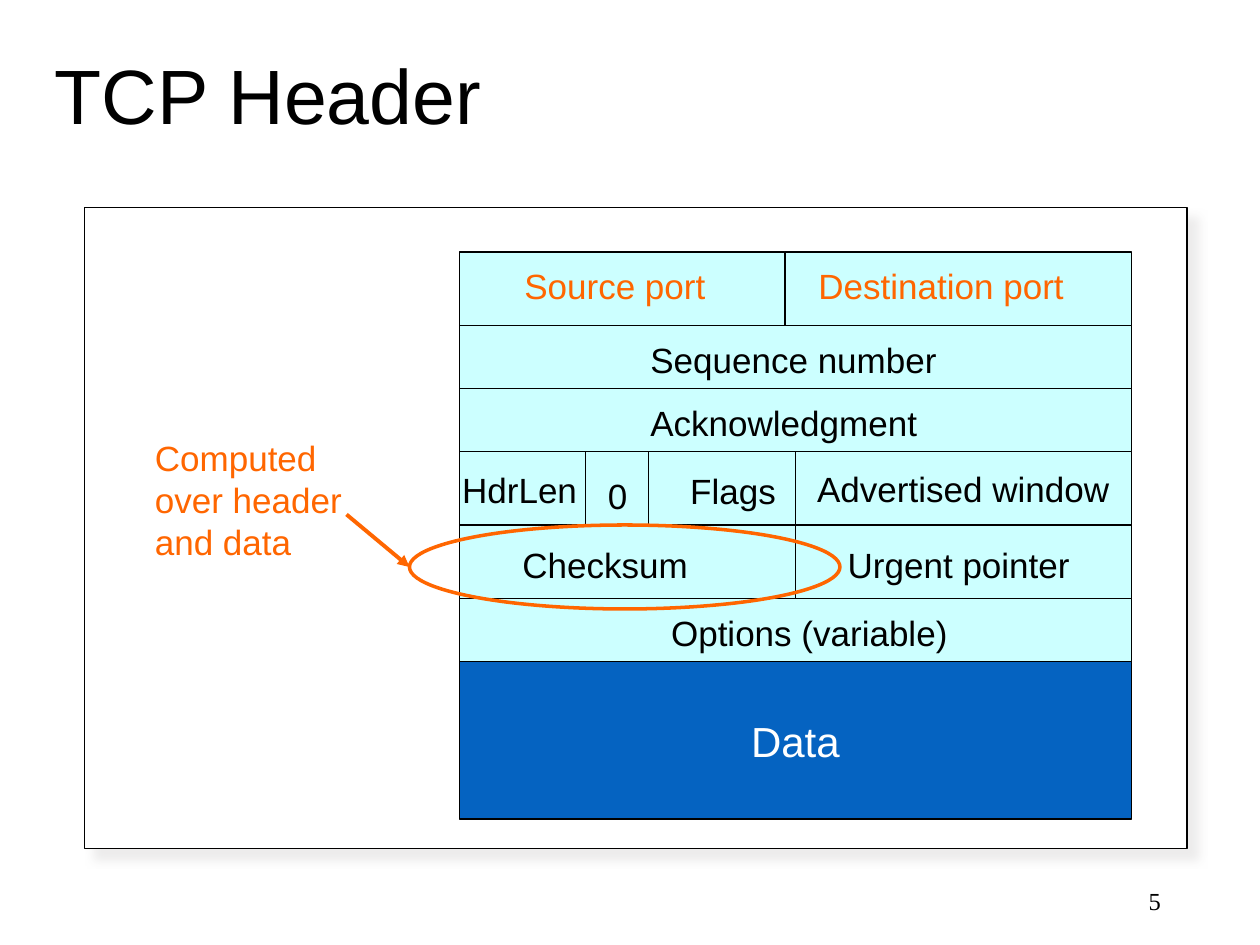
from typing import NamedTuple

from lxml import etree
from pptx import Presentation
from pptx.dml.color import RGBColor
from pptx.enum.shapes import MSO_CONNECTOR, MSO_SHAPE
from pptx.enum.text import MSO_ANCHOR, PP_ALIGN
from pptx.oxml import parse_xml
from pptx.oxml.ns import nsdecls, qn
from pptx.util import Pt

RECT, OVAL = MSO_SHAPE.RECTANGLE, MSO_SHAPE.OVAL
LINE = MSO_CONNECTOR.STRAIGHT
MIDDLE, TOP = MSO_ANCHOR.MIDDLE, MSO_ANCHOR.TOP
LEFT, CENTER, RIGHT = PP_ALIGN.LEFT, PP_ALIGN.CENTER, PP_ALIGN.RIGHT

BLACK = RGBColor(0x00, 0x00, 0x00)
WHITE = RGBColor(0xFF, 0xFF, 0xFF)
ORANGE = RGBColor(0xFF, 0x66, 0x00)
CYAN = RGBColor(0xCC, 0xFF, 0xFF)
BLUE = RGBColor(0x05, 0x63, 0xC1)

SHADOW = (
    f'<a:outerShdw {nsdecls("a")} blurRad="63500" dist="107950" dir="2700000" '
    'algn="tl" rotWithShape="0"><a:srgbClr val="E7E6E6">'
    '<a:alpha val="75000"/></a:srgbClr></a:outerShdw>'
)


class Box(NamedTuple):
    x: float
    y: float
    w: float
    h: float


class Row(NamedTuple):
    h: float
    split: float = 0
    fill: RGBColor = CYAN


class Label(NamedTuple):
    text: str
    x: float
    y: float
    w: float
    color: RGBColor = BLACK
    fill: RGBColor | None = CYAN


GRID = Box(262.5, 144, 384, 324)
ROWS = [
    Row(42, 186), Row(36), Row(36), Row(42, 192),
    Row(42, 192), Row(36), Row(90, fill=BLUE),
]
LABELS = [
    Label("Source port", 292.5, 147.6, 121, ORANGE),
    Label("Destination port", 460.6, 147.6, 158, ORANGE),
    Label("Sequence number", 364.5, 189.8, 182),
    Label("Acknowledgment", 364.5, 225.8, 171),
    Label("Advertised window", 459.8, 263.6, 184),
    Label("HdrLen", 257, 264, 84, fill=None),
    Label("Flags", 387.3, 264.8, 65),
    Label("0", 340.3, 267.6, 28),
    Label("Checksum", 291.4, 306.9, 113),
    Label("Urgent pointer", 477.3, 306.9, 148),
    Label("Options (variable)", 376.4, 345.8, 180),
]


def write(shape, text: str, size: float, color: RGBColor, align=LEFT,
          anchor=TOP, face: str = "Arial", wrap: bool = False) -> None:
    frame = shape.text_frame
    frame.text = text
    frame.word_wrap = wrap
    frame.vertical_anchor = anchor
    for para in frame.paragraphs:
        para.alignment = align
        para.font.size = Pt(size)
        para.font.name = face
        para.font.color.rgb = color


def draw(slide, kind, box: Box, fill: RGBColor | None,
         line: RGBColor = BLACK, width: float = 0.75):
    shape = slide.shapes.add_shape(kind, *map(Pt, box))
    shape.shadow.inherit = False
    if fill is None:
        shape.fill.background()
    else:
        shape.fill.solid()
        shape.fill.fore_color.rgb = fill
    shape.line.color.rgb = line
    shape.line.width = Pt(width)
    return shape


def link(slide, x1: float, y1: float, x2: float, y2: float,
         color: RGBColor = BLACK, width: float = 0.75, head: bool = False) -> None:
    line = slide.shapes.add_connector(LINE, Pt(x1), Pt(y1), Pt(x2), Pt(y2))
    line.line.color.rgb = color
    line.line.width = Pt(width)
    if head:
        etree.SubElement(line.line._get_or_add_ln(), qn("a:tailEnd"), type="triangle")
    etree.SubElement(line._element.spPr, qn("a:effectLst"))


def note(slide, box: Box, text: str, size: float, color: RGBColor, **style):
    shape = slide.shapes.add_textbox(*map(Pt, box))
    write(shape, text, size, color, **style)
    return shape


def grid(slide) -> None:
    y = GRID.y
    for row in ROWS:
        edges = [0, row.split, GRID.w] if row.split else [0, GRID.w]
        for a, b in zip(edges, edges[1:]):
            cell = draw(slide, RECT, Box(GRID.x + a, y, b - a, row.h), row.fill)
        y += row.h
    write(cell, "Data", 24, WHITE, CENTER, MIDDLE)


def label(slide, item: Label) -> None:
    shape = note(slide, Box(item.x, item.y, item.w, 31), item.text, 20, item.color)
    if item.fill is not None:
        shape.fill.solid()
        shape.fill.fore_color.rgb = item.fill


def main() -> None:
    deck = Presentation()
    deck.slide_width, deck.slide_height = Pt(720), Pt(540)
    slide = deck.slides.add_slide(deck.slide_layouts[5])

    title = slide.shapes.title
    title.left, title.top, title.width, title.height = map(Pt, (24, 30, 635, 54))
    write(title, "TCP Header", 44, BLACK, LEFT, MIDDLE, wrap=True)
    title.text_frame.paragraphs[0].line_spacing = 0.9

    panel = draw(slide, RECT, Box(48.4, 118.8, 630, 366), WHITE)
    panel._element.spPr.find(qn("a:effectLst")).append(parse_xml(SHADOW))

    grid(slide)
    for item in LABELS:
        label(slide, item)
    for x in (334.5, 370.5):
        link(slide, x, 258, x, 300)

    note(slide, Box(81.4, 246, 128, 80), "Computed \vover header\nand data", 20, ORANGE)
    draw(slide, OVAL, Box(234, 300, 246, 48), None, ORANGE, 2)
    link(slide, 198, 294, 234, 324, ORANGE, 2.25, True)
    note(slide, Box(508.5, 500.2, 162, 29), "5", 14, BLACK, align=RIGHT,
         anchor=MIDDLE, face="Times New Roman", wrap=True)

    deck.save("out.pptx")


if __name__ == "__main__":
    main()
